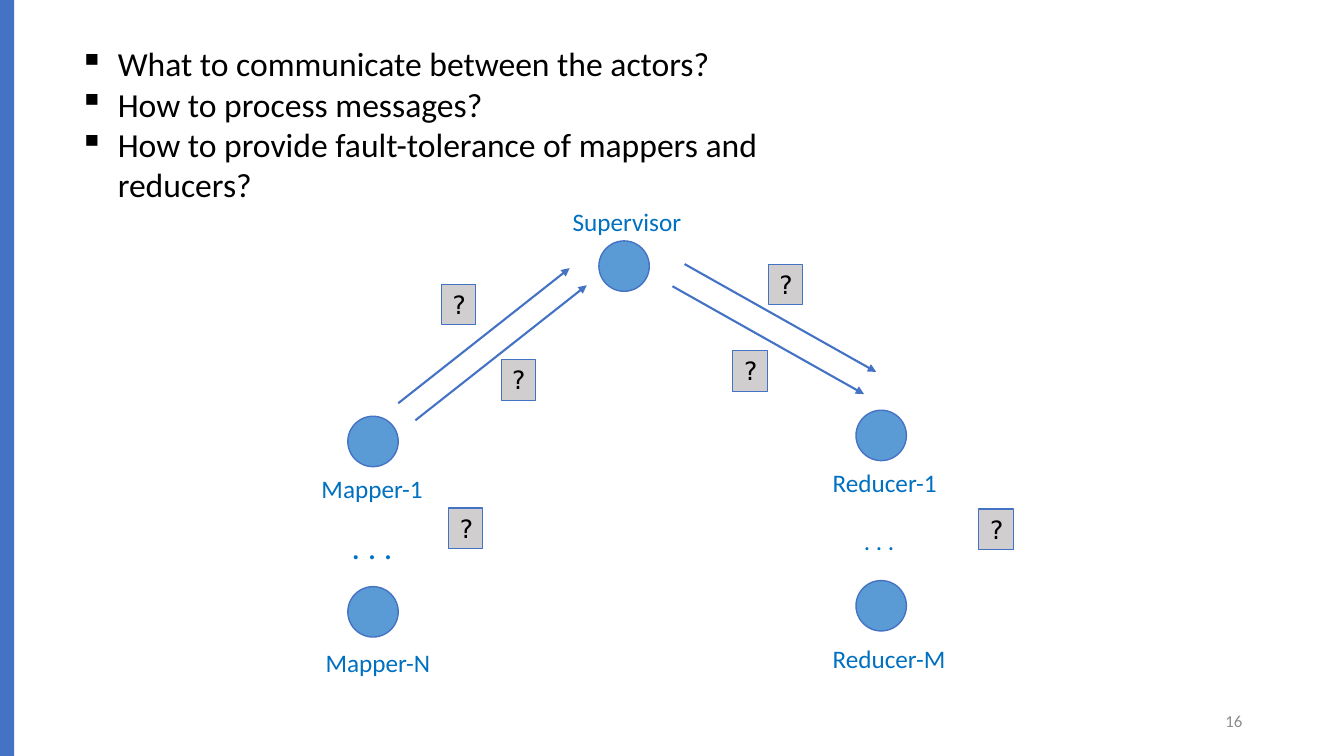
from lxml import etree
from pptx import Presentation
from pptx.dml.color import RGBColor
from pptx.enum.shapes import MSO_CONNECTOR, MSO_SHAPE
from pptx.enum.text import MSO_ANCHOR, PP_ALIGN
from pptx.oxml.ns import qn
from pptx.util import Inches, Pt

BLUE = RGBColor(0x44, 0x72, 0xC4)
ACTOR_BLUE = RGBColor(0x5B, 0x9B, 0xD5)
LABEL_BLUE = RGBColor(0x00, 0x70, 0xC0)
MESSAGE_GRAY = RGBColor(0xD0, 0xCE, 0xCE)
NUMBER_GRAY = RGBColor(0x8C, 0x8C, 0x8C)
BLACK = RGBColor(0, 0, 0)

presentation = Presentation()
presentation.slide_width = Inches(13.33)
presentation.slide_height = Inches(7.5)
slide = presentation.slides.add_slide(presentation.slide_layouts[6])


def add_shape(kind, left, top, width, height, fill, line_width=None):
    shape = slide.shapes.add_shape(
        kind, Inches(left), Inches(top), Inches(width), Inches(height))
    shape.shadow.inherit = False
    shape.fill.solid()
    shape.fill.fore_color.rgb = fill
    if line_width:
        shape.line.color.rgb = BLUE
        shape.line.width = Pt(line_width)
    else:
        shape.line.fill.background()
    return shape


def write(shape, lines, size, color, name="Calibri", align=PP_ALIGN.LEFT,
          anchor=MSO_ANCHOR.TOP, wrap=False, bullet=None):
    frame = shape.text_frame
    frame.word_wrap = wrap
    frame.vertical_anchor = anchor
    for index, line in enumerate(lines):
        paragraph = frame.paragraphs[0] if index == 0 else frame.add_paragraph()
        paragraph.text = line
        paragraph.alignment = align
        if bullet:
            properties = paragraph._p.get_or_add_pPr()
            properties.set("marL", str(Inches(0.38)))
            properties.set("indent", str(-Inches(0.38)))
            etree.SubElement(properties, qn("a:buChar")).set("char", bullet)
        for key, value in {"size": Pt(size), "name": name}.items():
            setattr(paragraph.font, key, value)
        paragraph.font.color.rgb = color


add_shape(MSO_SHAPE.RECTANGLE, 0, 0, 0.14, 7.5, BLUE)

page_number = slide.shapes.add_textbox(
    Inches(9.42), Inches(6.95), Inches(3), Inches(0.4))
write(page_number, ["16"], 12, NUMBER_GRAY, align=PP_ALIGN.RIGHT,
      anchor=MSO_ANCHOR.MIDDLE, wrap=True)

questions = slide.shapes.add_textbox(
    Inches(0.69), Inches(0.38), Inches(8.2), Inches(1.31))
write(questions, [
    "What to communicate between the actors?",
    "How to process messages?",
    "How to provide fault-tolerance of mappers and reducers?",
], 24, BLACK, wrap=True, bullet="▪")

# Actors
for left, top in [(5.94, 2.39), (3.45, 4.13), (3.45, 5.82),
                  (8.49, 4.07), (8.49, 5.76)]:
    add_shape(MSO_SHAPE.OVAL, left, top, 0.5, 0.5, ACTOR_BLUE, 1)

for text, left, top, width, height, size in [
    ("Supervisor", 5.58, 2, 1.29, 0.4, 18),
    ("Mapper-1", 3.09, 4.65, 1.22, 0.4, 18),
    (". . .", 3.39, 5.17, 0.76, 0.5, 24),
    ("Mapper-N", 3.13, 6.37, 1.25, 0.4, 18),
    ("Reducer-1", 8.16, 4.59, 1.25, 0.4, 18),
    (". . .", 8.47, 5.16, 0.62, 0.4, 18),
    ("Reducer-M", 8.16, 6.33, 1.33, 0.4, 18),
]:
    label = slide.shapes.add_textbox(
        Inches(left), Inches(top), Inches(width), Inches(height))
    write(label, [text], size, LABEL_BLUE)

# Message arrows: a parallel pair on each side of the supervisor
for left, top, run, rise in [(3.95, 4, 1.7, -1.34), (4.12, 4.17, 1.7, -1.34),
                             (6.79, 2.62, 1.9, 1.07), (6.67, 2.84, 1.9, 1.07)]:
    arrow = slide.shapes.add_connector(
        MSO_CONNECTOR.STRAIGHT, Inches(left), Inches(top),
        Inches(left + run), Inches(top + rise))
    arrow.line.color.rgb = BLUE
    arrow.line.width = Pt(1.5)
    etree.SubElement(arrow.line._get_or_add_ln(), qn("a:tailEnd")).set("type", "triangle")
    etree.SubElement(arrow._element.spPr, qn("a:effectLst"))

# Unknown messages
for left, top in [(4.38, 2.82), (4.97, 3.57), (7.62, 2.62),
                  (7.27, 3.48), (4.45, 5.04), (9.71, 5.05)]:
    message = add_shape(MSO_SHAPE.RECTANGLE, left, top, 0.34, 0.4, MESSAGE_GRAY, 0.75)
    write(message, ["?"], 18, BLACK, name="DejaVu Sans Mono")

presentation.save("out.pptx")
